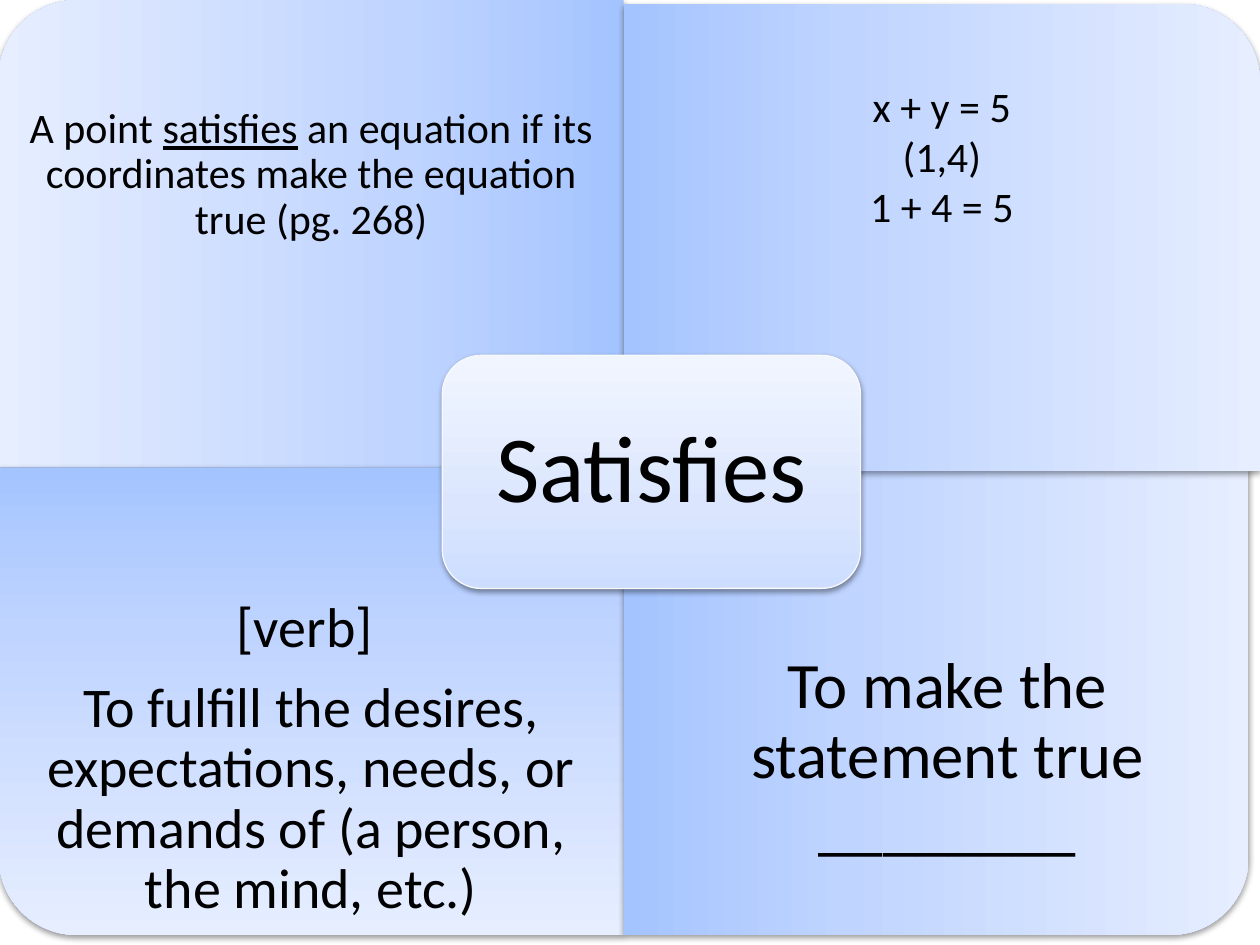
from copy import deepcopy

from pptx import Presentation
from pptx import oxml
from pptx import util as u
from pptx.dml.color import RGBColor
from pptx.enum import shapes, text
from pptx.oxml import ns

BLACK = RGBColor(0x00, 0x00, 0x00)
OUTLINE = RGBColor(0xF9, 0xF9, 0xF9)
QUARTER_COLORS = (
    RGBColor(0xA4, 0xC4, 0xFF),
    RGBColor(0xBF, 0xD4, 0xFF),
    RGBColor(0xE6, 0xEE, 0xFF),
)
CENTER_COLORS = (
    RGBColor(0xCD, 0xDD, 0xFF),
    RGBColor(0xDB, 0xE6, 0xFE),
    RGBColor(0xF1, 0xF5, 0xFF),
)
STOP_POSITIONS = (0, 0.35, 1)
SHADOW = (
    f'<a:outerShdw {ns.nsdecls("a")} blurRad="40000" dist="20000" '
    'dir="5400000" rotWithShape="0"><a:srgbClr val="000000">'
    '<a:alpha val="38000"/></a:srgbClr></a:outerShdw>'
)

QUARTER_HEIGHT = 3.71
TEXT_HEIGHT = 2.78
QUARTER_WIDTH = 4.96


class MatrixSlide:
    font = "Calibri"

    def __init__(self, slide):
        self.slide = slide

    def panel(self, kind, left, top, width, height, colors, rotation=0, flipped=False):
        if rotation % 180:
            left += (width - height) / 2
            top += (height - width) / 2
            width, height = height, width
        shape = self.slide.shapes.add_shape(
            kind, u.Inches(left), u.Inches(top), u.Inches(width), u.Inches(height)
        )
        shape.rotation = rotation
        properties = shape._element.spPr
        if flipped:
            properties.find(ns.qn("a:xfrm")).set("flipH", "1")
        shape.fill.gradient()
        shape.fill.gradient_angle = 90
        stop_list = properties.find(".//" + ns.qn("a:gsLst"))
        stop_list.append(deepcopy(stop_list[0]))
        for stop, color, position in zip(shape.fill.gradient_stops, colors, STOP_POSITIONS):
            stop.color.rgb = color
            stop.position = position
        shape.line.fill.background()
        shape.shadow.inherit = False
        properties.find(ns.qn("a:effectLst")).append(oxml.parse_xml(SHADOW))
        return shape

    def text_box(self, left, top, width, lines, size, inset, **options):
        box = self.slide.shapes.add_textbox(
            u.Inches(left), u.Inches(top), u.Inches(width), u.Inches(TEXT_HEIGHT)
        )
        self.fill_text(box.text_frame, lines, size, inset, **options)
        return box

    def fill_text(self, frame, lines, size, inset, line_spacing=0.9, space_after=0.35):
        frame.word_wrap = True
        frame.vertical_anchor = text.MSO_ANCHOR.MIDDLE
        frame.margin_left = frame.margin_right = u.Inches(inset)
        frame.margin_top = frame.margin_bottom = u.Inches(inset)
        frame.text = "\n".join(lines)
        for paragraph in frame.paragraphs:
            paragraph.alignment = text.PP_ALIGN.CENTER
            paragraph.line_spacing = line_spacing
            paragraph.space_after = u.Pt(size * space_after)
            for run in paragraph.runs:
                self.format_run(run, size)

    def format_run(self, run, size):
        run.font.name = self.font
        run.font.size = u.Pt(size)
        run.font.color.rgb = BLACK

    def underline(self, paragraph, word):
        first = paragraph.runs[0]
        size = first.font.size.pt
        before, term, after = first.text.partition(word)
        first.text = before
        for piece in (term, after):
            run = paragraph.add_run()
            run.text = piece
            self.format_run(run, size)
            run.font.underline = piece == term


def main():
    presentation = Presentation()
    presentation.slide_width = u.Inches(10)
    presentation.slide_height = u.Inches(7.5)
    matrix = MatrixSlide(presentation.slides.add_slide(presentation.slide_layouts[6]))
    quarter = shapes.MSO_SHAPE.ROUND_1_RECTANGLE

    matrix.panel(quarter, -0.01, 0, QUARTER_WIDTH, QUARTER_HEIGHT, QUARTER_COLORS, 270)
    definition = matrix.text_box(
        -0.01, 0, QUARTER_WIDTH,
        ["A point satisfies an equation if its coordinates make the equation true (pg. 268)"],
        24, 0.19,
    )
    matrix.underline(definition.text_frame.paragraphs[0], "satisfies")

    matrix.panel(quarter, -0.01, 3.71, QUARTER_WIDTH, QUARTER_HEIGHT, QUARTER_COLORS, 180)
    matrix.text_box(
        -0.01, 4.64, QUARTER_WIDTH,
        ["[verb] ",
         "To fulfill the desires, expectations, needs, or demands of (a person, the mind, etc.)"],
        32, 0.25,
    )

    matrix.panel(quarter, 4.95, 3.71, QUARTER_WIDTH, QUARTER_HEIGHT, QUARTER_COLORS, 90)
    matrix.text_box(
        5.04, 4.62, QUARTER_WIDTH, ["To make the statement true ________"], 37, 0.29
    )

    matrix.panel(quarter, 4.95, 0.03, 5.05, QUARTER_HEIGHT, QUARTER_COLORS, 90, flipped=True)
    example = matrix.text_box(
        4.95, 0.03, 5.05, ["x + y = 5", "(1,4)", "1 + 4 = 5"], 24, 0.19,
        line_spacing=1.0, space_after=0,
    )
    example.text_frame.margin_bottom = u.Inches(0.56)

    center = matrix.panel(
        shapes.MSO_SHAPE.ROUNDED_RECTANGLE, 3.51, 2.82, 3.32, 1.85, CENTER_COLORS
    )
    center.line.color.rgb = OUTLINE
    center.line.width = u.Pt(0.75)
    matrix.fill_text(center.text_frame, ["Satisfies"], 54, 0.23)

    presentation.save("out.pptx")


if __name__ == "__main__":
    main()
